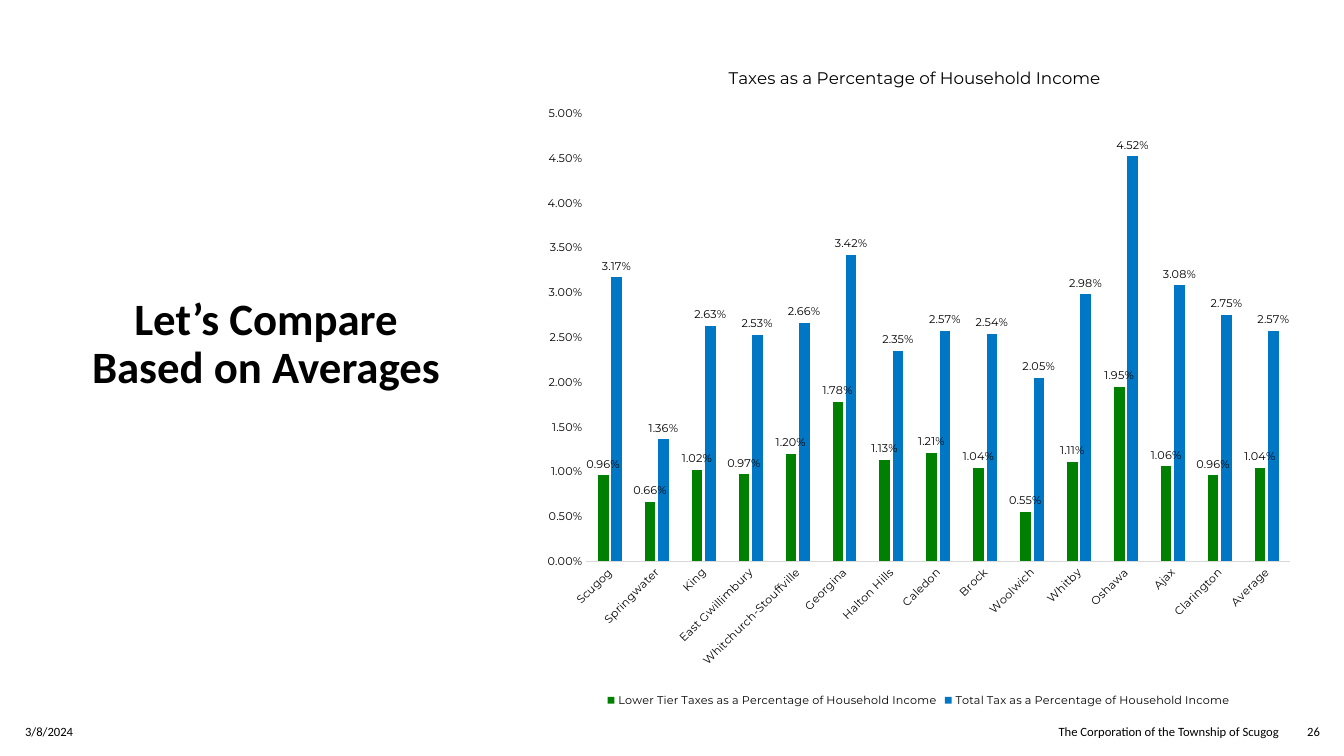
from lxml import etree
from pptx import Presentation
from pptx.chart.data import CategoryChartData
from pptx.dml.color import RGBColor
from pptx.enum.chart import XL_CHART_TYPE, XL_LABEL_POSITION, XL_LEGEND_POSITION, XL_TICK_MARK
from pptx.enum.text import MSO_ANCHOR, PP_ALIGN
from pptx.oxml.ns import qn
from pptx.util import Inches, Pt

BLACK = RGBColor(0x00, 0x00, 0x00)
GREEN = RGBColor(0x00, 0x80, 0x00)
BLUE = RGBColor(0x00, 0x77, 0xC4)
AXIS_GREY = RGBColor(0xD9, 0xD9, 0xD9)

COLUMNS = XL_CHART_TYPE.COLUMN_CLUSTERED
OUTSIDE_END = XL_LABEL_POSITION.OUTSIDE_END
LEGEND_BOTTOM = XL_LEGEND_POSITION.BOTTOM
NO_TICKS = XL_TICK_MARK.NONE
LEFT, CENTER, RIGHT = PP_ALIGN.LEFT, PP_ALIGN.CENTER, PP_ALIGN.RIGHT
MIDDLE, BOTTOM = MSO_ANCHOR.MIDDLE, MSO_ANCHOR.BOTTOM

PERCENT = "0.00%"
LOWER_TIER = "Lower Tier Taxes as a Percentage of Household Income"
TOTAL_TAX = "Total Tax as a Percentage of Household Income"

# municipality, lower tier tax %, total tax %
TAX_SHARES = [
    ("Scugog", 0.96, 3.17),
    ("Springwater", 0.66, 1.36),
    ("King", 1.02, 2.63),
    ("East Gwillimbury", 0.97, 2.53),
    ("Whitchurch-Stouffville", 1.20, 2.66),
    ("Georgina", 1.78, 3.42),
    ("Halton Hills", 1.13, 2.35),
    ("Caledon", 1.21, 2.57),
    ("Brock", 1.04, 2.54),
    ("Woolwich", 0.55, 2.05),
    ("Whitby", 1.11, 2.98),
    ("Oshawa", 1.95, 4.52),
    ("Ajax", 1.06, 3.08),
    ("Clarington", 0.96, 2.75),
    ("Average", 1.04, 2.57),
]


def set_layout(parent, index, **fractions):
    """Place a chart part by fractions of the chart area."""
    for old in parent.findall(qn("c:layout")):
        parent.remove(old)
    layout = etree.Element(qn("c:layout"))
    manual = etree.SubElement(layout, qn("c:manualLayout"))
    if "w" in fractions:
        etree.SubElement(manual, qn("c:layoutTarget")).set("val", "inner")
    for axis in ("x", "y"):
        etree.SubElement(manual, qn(f"c:{axis}Mode")).set("val", "edge")
    for key, fraction in fractions.items():
        etree.SubElement(manual, qn(f"c:{key}")).set("val", str(fraction))
    parent.insert(index, layout)


class SlideBuilder:
    text_font = "Calibri"
    chart_font = "Montserrat"
    chart_size = 8

    def __init__(self, slide):
        self.slide = slide

    def style(self, font, name, size, bold=False):
        font.name = name
        font.size = Pt(size)
        font.bold = bold
        font.color.rgb = BLACK

    def text(self, words, left, top, width, height, size=9, align=LEFT,
             anchor=MIDDLE, bold=False, spacing=1.0):
        box = self.slide.shapes.add_textbox(
            Inches(left), Inches(top), Inches(width), Inches(height))
        frame = box.text_frame
        frame.word_wrap = True
        frame.vertical_anchor = anchor
        paragraph = frame.paragraphs[0]
        paragraph.text = words
        paragraph.alignment = align
        paragraph.line_spacing = spacing
        self.style(paragraph.font, self.text_font, size, bold)

    def column_chart(self, title, rows, series_styles, left, top, width, height):
        names, *columns = zip(*rows)
        data = CategoryChartData(number_format=PERCENT)
        data.categories = names
        for (series_name, _), percents in zip(series_styles, columns):
            data.add_series(series_name, [round(p / 100, 4) for p in percents])
        chart = self.slide.shapes.add_chart(
            COLUMNS, Inches(left), Inches(top), Inches(width), Inches(height), data).chart
        self.style(chart.font, self.chart_font, self.chart_size)
        self.chart_title(chart, title)
        self.chart_axes(chart)

        plot = chart.plots[0]
        plot.gap_width = 219
        plot.overlap = -27
        plot.vary_by_categories = False
        for series, (_, color) in zip(plot.series, series_styles):
            series.format.fill.solid()
            series.format.fill.fore_color.rgb = color
            labels = series.data_labels
            labels.show_value = True
            labels.position = OUTSIDE_END
            labels.number_format = PERCENT
            labels.number_format_is_linked = False
            self.style(labels.font, self.chart_font, self.chart_size)

        chart.has_legend = True
        chart.legend.position = LEGEND_BOTTOM
        chart.legend.include_in_layout = False
        self.style(chart.legend.font, self.chart_font, self.chart_size)
        plot_area = chart.value_axis._element.getparent()
        set_layout(plot_area, 0, x=0.07, y=0.105, w=0.91, h=0.67)

    def chart_title(self, chart, words):
        chart.has_title = True
        frame = chart.chart_title.text_frame
        frame.text = words
        self.style(frame.paragraphs[0].font, self.chart_font, 12)
        chart.chart_title.include_in_layout = False
        set_layout(chart.chart_title._element, 1, x=0.25, y=0.03)

    def chart_axes(self, chart):
        for axis in (chart.category_axis, chart.value_axis):
            axis.major_tick_mark = NO_TICKS
            axis.minor_tick_mark = NO_TICKS
            axis.has_major_gridlines = False
            self.style(axis.tick_labels.font, self.chart_font, self.chart_size)
        category_line = chart.category_axis.format.line
        category_line.color.rgb = AXIS_GREY
        category_line.width = Pt(0.75)
        category_text = chart.category_axis._element.find(qn("c:txPr"))
        category_text.find(qn("a:bodyPr")).set("rot", "-2700000")

        values = chart.value_axis
        values.format.line.fill.background()
        values.minimum_scale = 0
        values.maximum_scale = 0.05
        values.major_unit = 0.005
        values.tick_labels.number_format = PERCENT
        values.tick_labels.number_format_is_linked = False


def main():
    deck = Presentation()
    deck.slide_width = Inches(13.33)
    deck.slide_height = Inches(7.5)
    builder = SlideBuilder(deck.slides.add_slide(deck.slide_layouts[6]))

    builder.text("Let’s Compare Based on Averages", 0.81, 1.5, 3.66, 2.45,
                 size=32, align=CENTER, anchor=BOTTOM, bold=True, spacing=0.9)
    builder.column_chart("Taxes as a Percentage of Household Income", TAX_SHARES,
                         [(LOWER_TIER, GREEN), (TOTAL_TAX, BLUE)],
                         5.28, 0.43, 7.67, 6.63)

    footers = [
        ("3/8/2024", 0.15, 3.82, LEFT),
        ("The Corporation of the Township of Scugog", 9.71, 3.07, RIGHT),
        ("26", 12.72, 0.47, RIGHT),
    ]
    for words, left, width, align in footers:
        builder.text(words, left, 7.06, width, 0.4, align=align)

    deck.save("out.pptx")


if __name__ == "__main__":
    main()
